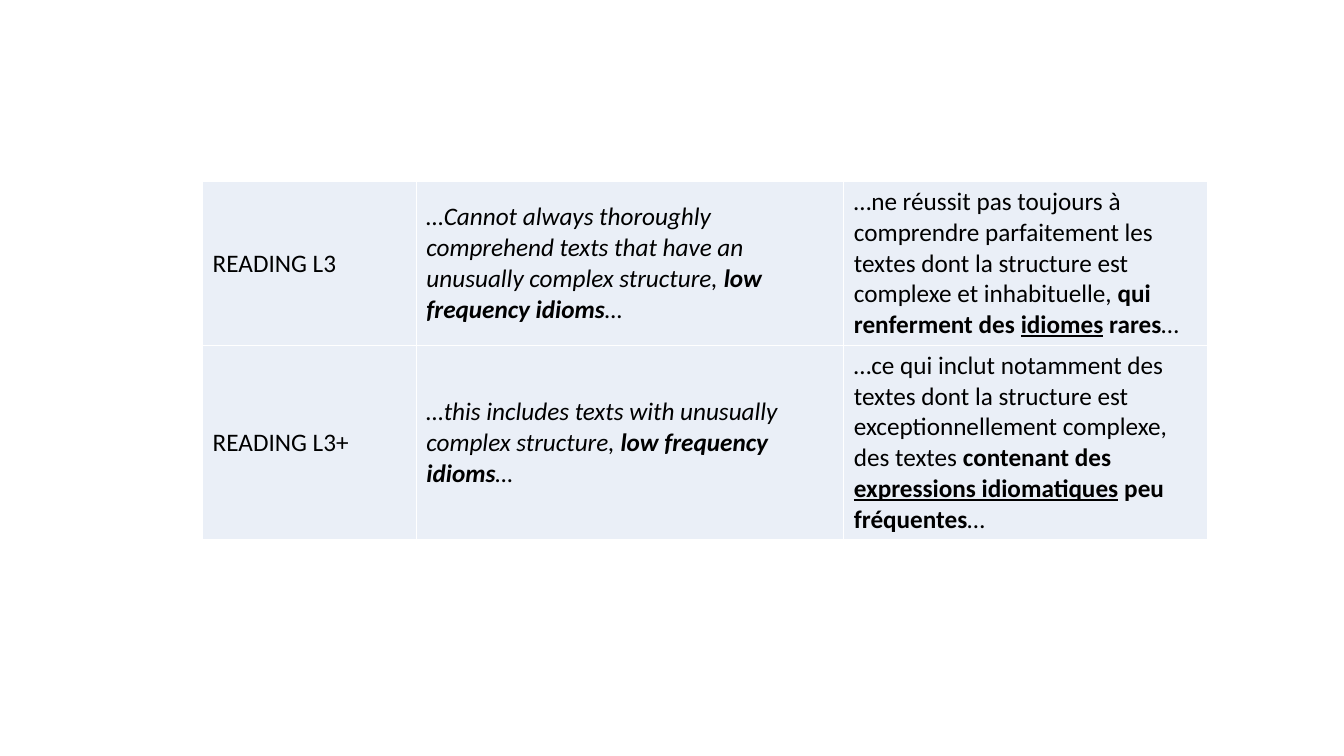
from lxml import etree
from pptx import Presentation
from pptx.dml.color import RGBColor
from pptx.enum.text import MSO_ANCHOR
from pptx.oxml.ns import qn
from pptx.util import Inches, Pt

PALE_BLUE = RGBColor(0xEA, 0xEF, 0xF7)
BLACK = RGBColor(0, 0, 0)
WHITE = RGBColor(0xFF, 0xFF, 0xFF)
MIDDLE = MSO_ANCHOR.MIDDLE

FONT = "Calibri"
COL_SHARES = (2.12, 4.24, 3.61)
ROW_SHARES = (1.62, 1.93)

ROWS = [
    [
        [[("READING L3", "")]],
        [
            [("…Cannot always thoroughly comprehend texts that have an "
              "unusually complex structure, ", "i"), ("low", "bi")],
            [("frequency idioms", "bi"), ("…", "i")],
        ],
        [[
            ("…ne réussit pas toujours à comprendre parfaitement les textes "
             "dont la structure est complexe et inhabituelle, ", ""),
            ("qui renferment des ", "b"), ("idiomes", "bu"),
            (" rares", "b"), ("…", ""),
        ]],
    ],
    [
        [[("READING L3+", "")]],
        [[
            ("…this includes texts with unusually complex structure, ", "i"),
            ("low frequency idioms", "bi"), ("…", "i"),
        ]],
        [[
            ("…ce qui inclut notamment des textes dont la structure est "
             "exceptionnellement complexe, des textes ", ""),
            ("contenant des ", "b"), ("expressions idiomatiques", "bu"),
            (" peu fréquentes", "b"), ("…", ""),
        ]],
    ],
]


def set_borders(cell, color, width):
    tc_pr = cell._tc.get_or_add_tcPr()
    for side in ("a:lnL", "a:lnR", "a:lnT", "a:lnB"):
        ln = etree.SubElement(tc_pr, qn(side), w=str(width))
        fill = etree.SubElement(ln, qn("a:solidFill"))
        etree.SubElement(fill, qn("a:srgbClr"), val=str(color))


def fill_cell(cell, paragraphs):
    set_borders(cell, WHITE, Pt(1))
    cell.fill.solid()
    cell.fill.fore_color.rgb = PALE_BLUE
    cell.vertical_anchor = MIDDLE
    tf = cell.text_frame
    for i, runs in enumerate(paragraphs):
        p = tf.add_paragraph() if i else tf.paragraphs[0]
        for text, style in runs:
            r = p.add_run()
            r.text = text
            r.font.name = FONT
            r.font.size = Pt(18)
            r.font.color.rgb = BLACK
            r.font.bold = "b" in style
            r.font.italic = "i" in style
            r.font.underline = "u" in style


def add_level_table(s, left, top, width, height):
    table = s.shapes.add_table(
        len(ROWS), len(COL_SHARES), left, top, width, height).table
    table.first_row = False
    table.horz_banding = False
    for col, share in zip(table.columns, COL_SHARES):
        col.width = int(width * share / sum(COL_SHARES))
    for row, share, contents in zip(table.rows, ROW_SHARES, ROWS):
        row.height = int(height * share / sum(ROW_SHARES))
        for cell, paragraphs in zip(row.cells, contents):
            fill_cell(cell, paragraphs)


def main():
    prs = Presentation()
    prs.slide_width = Inches(13.33)
    prs.slide_height = Inches(7.5)
    s = prs.slides.add_slide(prs.slide_layouts[6])
    add_level_table(s, Inches(2.01), Inches(1.8), Inches(9.97), Inches(3.55))
    prs.save("out.pptx")


if __name__ == "__main__":
    main()
